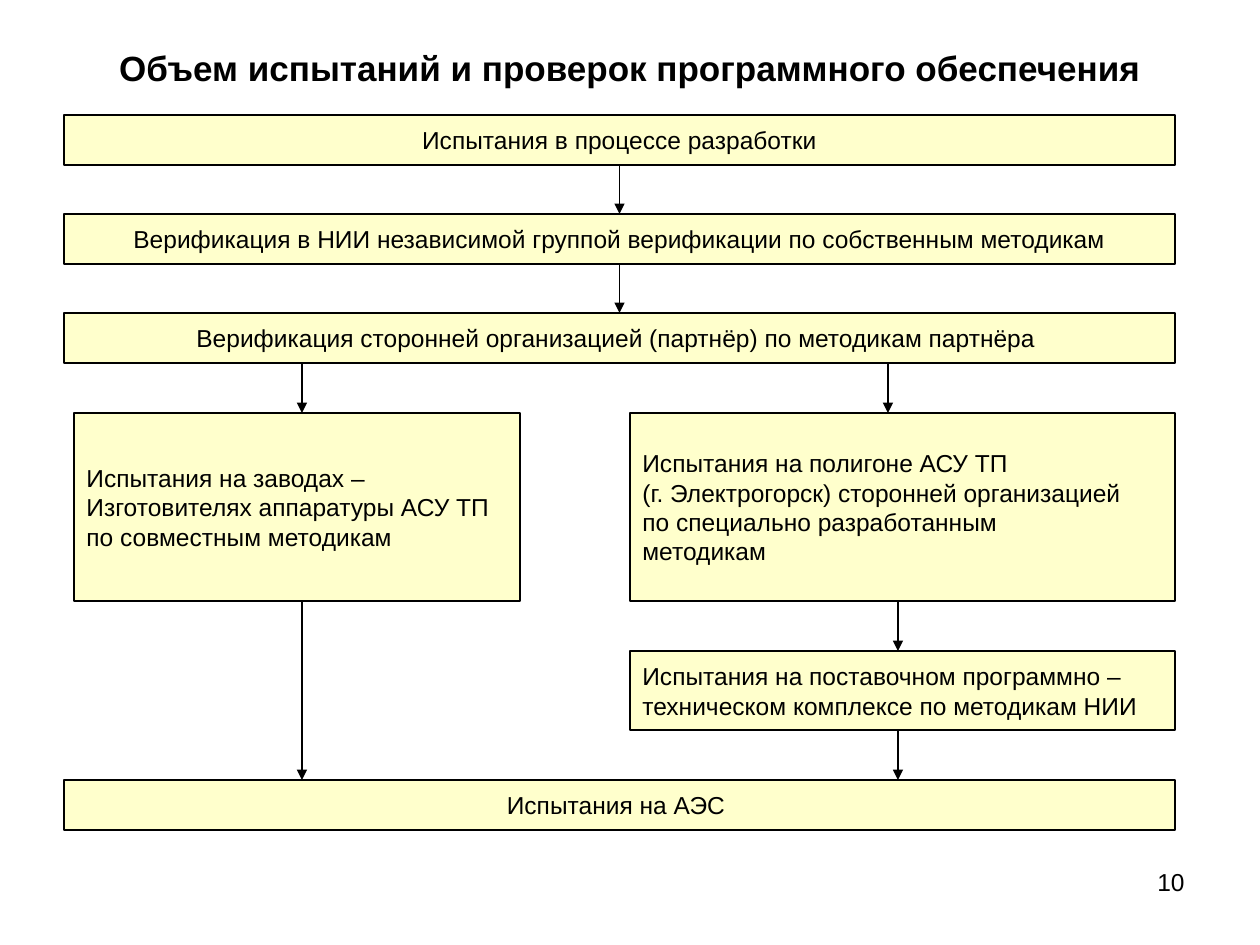
"""Build a slide with the flow of software tests and checks."""
from lxml import etree
from pptx import Presentation
from pptx.dml.color import RGBColor
from pptx.enum.shapes import MSO_CONNECTOR, MSO_SHAPE
from pptx.enum.text import MSO_ANCHOR, PP_ALIGN
from pptx.oxml.ns import qn
from pptx.util import Pt

EMU_PER_PX = 914400 / 126
FONT = "Arial"
COLORS = {"text": "000000", "line": "000000", "box": "FFFFCC"}
LEFT, CENTER, RIGHT = PP_ALIGN.LEFT, PP_ALIGN.CENTER, PP_ALIGN.RIGHT
MIDDLE, TOP = MSO_ANCHOR.MIDDLE, MSO_ANCHOR.TOP
RECTANGLE = MSO_SHAPE.RECTANGLE
STRAIGHT = MSO_CONNECTOR.STRAIGHT
TOP_SIDE, BOTTOM_SIDE = 0, 2

WIDE_LEFT, WIDE_WIDTH, WIDE_HEIGHT = 64, 1111, 50
RIGHT_LEFT, RIGHT_WIDTH = 630, 545
FIRST_TOP, ROW_PITCH = 115, 99
BRANCH_TOP, BRANCH_HEIGHT = 413, 188
DELIVERY_TOP, DELIVERY_HEIGHT = 651, 79
FINAL_TOP = 780

STAGES = [
    "Испытания в процессе разработки",
    "Верификация в НИИ независимой группой верификации по собственным методикам",
    "Верификация сторонней организацией (партнёр) по методикам партнёра ",
]
FACTORY = [
    "Испытания на заводах –",
    "Изготовителях аппаратуры АСУ ТП",
    "по совместным методикам",
]
TEST_SITE = [
    "Испытания на полигоне АСУ ТП",
    "(г. Электрогорск) сторонней организацией",
    "по специально разработанным",
    "методикам",
]
DELIVERY = [
    "Испытания на поставочном программно –",
    "техническом комплексе по методикам НИИ",
]


def px(value):
    """Turn pixels into EMU."""
    return round(value * EMU_PER_PX)


def color(name):
    """Return a named colour."""
    return RGBColor.from_string(COLORS[name])


def write_text(shape, lines, align, size=14, bold=False, anchor=MIDDLE, wrap=False):
    """Write one paragraph per line into a shape."""
    frame = shape.text_frame
    frame.word_wrap = wrap
    frame.vertical_anchor = anchor
    for index, line in enumerate(lines):
        paragraph = frame.add_paragraph() if index else frame.paragraphs[0]
        paragraph.alignment = align
        run = paragraph.add_run()
        run.text = line
        run.font.name = FONT
        run.font.size = Pt(size)
        run.font.bold = bold
        run.font.color.rgb = color("text")


def add_title(slide, text):
    """Place and fill the title placeholder."""
    title = slide.shapes.title
    title.left, title.top = px(63), px(38)
    title.width, title.height = px(1134), px(58)
    write_text(title, [text], CENTER, size=20, bold=True, wrap=True)


def add_box(slide, left, top, width, height, lines, align=LEFT):
    """Add a bordered box with text."""
    box = slide.shapes.add_shape(RECTANGLE, px(left), px(top), px(width), px(height))
    box.shadow.inherit = False
    box.fill.solid()
    box.fill.fore_color.rgb = color("box")
    box.line.color.rgb = color("line")
    box.line.width = Pt(0.75)
    write_text(box, lines, align)
    return box


def add_wide_box(slide, top, text):
    """Add a box across the whole chart."""
    return add_box(slide, WIDE_LEFT, top, WIDE_WIDTH, WIDE_HEIGHT, [text], CENTER)


def add_arrow(slide, x, start, end):
    """Add a downward arrow."""
    arrow = slide.shapes.add_connector(STRAIGHT, px(x), px(start), px(x), px(end))
    arrow.line.color.rgb = color("line")
    arrow.line.width = Pt(0.75)
    properties = arrow.element.spPr
    etree.SubElement(properties.find(qn("a:ln")), qn("a:tailEnd"), type="triangle")
    etree.SubElement(properties, qn("a:effectLst"))
    return arrow


def add_page_number(slide, text):
    """Add the page number at the lower right."""
    box = slide.shapes.add_textbox(px(903), px(861), px(294), px(66))
    write_text(box, [text], RIGHT, anchor=TOP, wrap=True)


def main():
    """Build and save the slide."""
    presentation = Presentation()
    presentation.slide_width, presentation.slide_height = px(1260), px(945)
    slide = presentation.slides.add_slide(presentation.slide_layouts[5])
    add_title(slide, "Объем испытаний и проверок программного обеспечения")

    stage_tops = [FIRST_TOP + index * ROW_PITCH for index in range(len(STAGES))]
    stages = [add_wide_box(slide, top, text) for top, text in zip(stage_tops, STAGES)]
    add_box(slide, RIGHT_LEFT, BRANCH_TOP, RIGHT_WIDTH, BRANCH_HEIGHT, TEST_SITE)
    add_box(slide, RIGHT_LEFT, DELIVERY_TOP, RIGHT_WIDTH, DELIVERY_HEIGHT, DELIVERY)
    add_box(slide, 74, BRANCH_TOP, 446, BRANCH_HEIGHT, FACTORY)
    add_wide_box(slide, FINAL_TOP, "Испытания на АЭС ")

    for index in range(len(stages) - 1):
        start, end = stage_tops[index] + WIDE_HEIGHT, stage_tops[index + 1]
        arrow = add_arrow(slide, WIDE_LEFT + WIDE_WIDTH / 2, start, end)
        arrow.begin_connect(stages[index], BOTTOM_SIDE)
        arrow.end_connect(stages[index + 1], TOP_SIDE)

    stages_bottom = stage_tops[-1] + WIDE_HEIGHT
    branch_bottom = BRANCH_TOP + BRANCH_HEIGHT
    for x, start, end in [
        (302, stages_bottom, BRANCH_TOP),
        (888, stages_bottom, BRANCH_TOP),
        (898, branch_bottom, DELIVERY_TOP),
        (898, DELIVERY_TOP + DELIVERY_HEIGHT, FINAL_TOP),
        (302, branch_bottom, FINAL_TOP),
    ]:
        add_arrow(slide, x, start, end)

    add_page_number(slide, "10")
    presentation.save("out.pptx")


if __name__ == "__main__":
    main()
